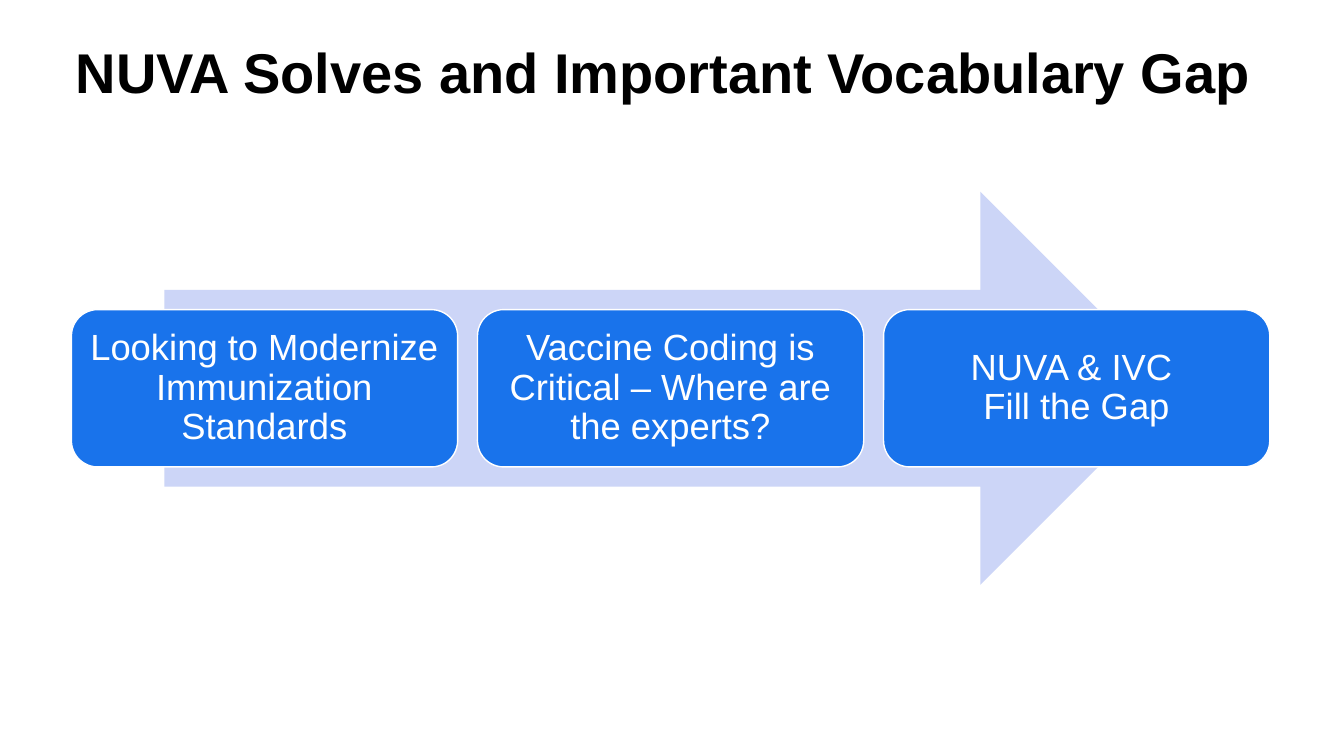
from pptx import Presentation
from pptx.dml.color import RGBColor
from pptx.enum.shapes import MSO_SHAPE as Shape
from pptx.enum.text import MSO_ANCHOR as Anchor, PP_ALIGN as Align
from pptx.util import Cm, Pt

STEPS = [
    "Looking to Modernize Immunization Standards",
    "Vaccine Coding is Critical – Where are the experts?",
    "NUVA & IVC \vFill the Gap",
]


def color(value):
    """Turn a hex string into a colour."""
    return RGBColor.from_string(value)


def write(text_frame, text, size, hex_color, align, anchor, inset, bold=False):
    """Fill a text frame with one formatted paragraph."""
    text_frame.word_wrap = True
    text_frame.vertical_anchor = anchor
    text_frame.margin_left = text_frame.margin_right = Cm(inset)
    text_frame.margin_top = text_frame.margin_bottom = Cm(inset)
    text_frame.text = text
    paragraph = text_frame.paragraphs[0]
    paragraph.alignment = align
    paragraph.line_spacing = 0.9
    for run in paragraph.runs:
        run.font.name = "Arial"
        run.font.size = Pt(size)
        run.font.bold = bold
        run.font.color.rgb = color(hex_color)


def add_block(slide, preset, left, top, width, height, fill):
    """Add a filled shape without outline or shadow."""
    shape = slide.shapes.add_shape(preset, Cm(left), Cm(top), Cm(width), Cm(height))
    shape.shadow.inherit = False
    shape.fill.solid()
    shape.fill.fore_color.rgb = color(fill)
    shape.line.fill.background()
    return shape


def add_title(slide, left, top, width, height):
    """Add the slide heading."""
    box = slide.shapes.add_textbox(Cm(left), Cm(top), Cm(width), Cm(height))
    write(box.text_frame, "NUVA Solves and Important Vocabulary Gap",
          40, "000000", Align.LEFT, Anchor.TOP, 0.13, bold=True)


def add_process(slide, left, top, width, height):
    """Add the wide arrow with the step cards spread evenly across it."""
    arrow_width = width * 0.845
    arrow_left = left + (width - arrow_width) / 2
    add_block(slide, Shape.RIGHT_ARROW, arrow_left, top, arrow_width, height, "CCD5F7")
    gap = 0.5
    card_width = (width - gap * (len(STEPS) - 1)) / len(STEPS)
    card_height = height * 0.4
    card_top = top + (height - card_height) / 2
    for index, step in enumerate(STEPS):
        card_left = left + index * (card_width + gap)
        card = add_block(slide, Shape.ROUNDED_RECTANGLE, card_left, card_top,
                         card_width, card_height, "1973EB")
        card.line.color.rgb = color("FFFFFF")
        card.line.width = Pt(1)
        write(card.text_frame, step, 26, "FFFFFF", Align.CENTER, Anchor.MIDDLE, 0.28)


def main():
    """Build and save the presentation."""
    presentation = Presentation()
    presentation.slide_width = Cm(33.87)
    presentation.slide_height = Cm(19.05)
    slide = presentation.slides.add_slide(presentation.slide_layouts[6])
    add_title(slide, 1.78, 1.02, 30.25, 3.05)
    add_process(slide, 1.8, 4.83, 30.2, 9.91)
    presentation.save("out.pptx")


if __name__ == "__main__":
    main()
